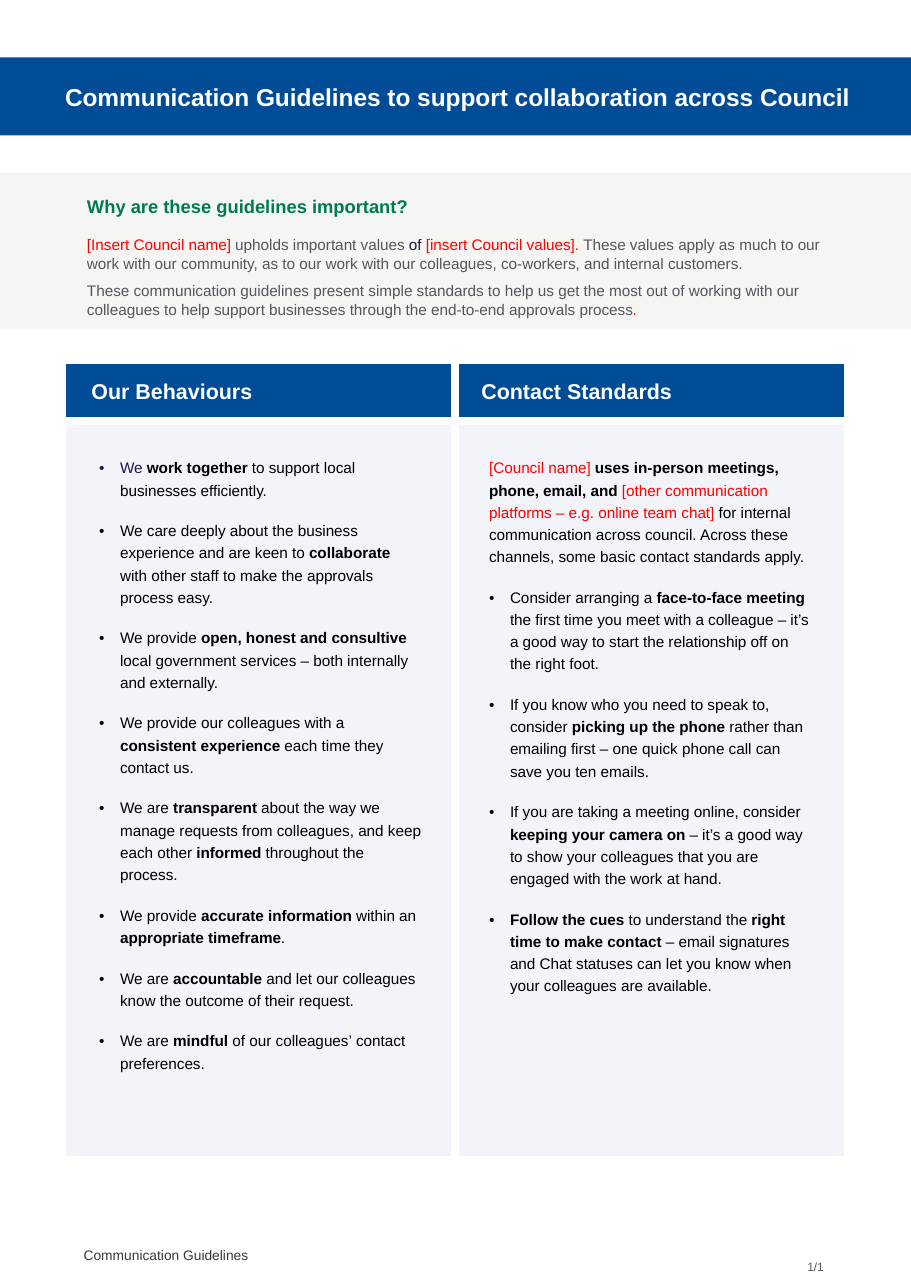
import dataclasses

import pptx
import pptx.dml.color
import pptx.enum.shapes
import pptx.enum.text
import pptx.oxml.ns
import pptx.util
from lxml import etree
from pptx.util import Inches

ALIGN = pptx.enum.text.PP_ALIGN
ANCHOR = pptx.enum.text.MSO_ANCHOR


@dataclasses.dataclass(frozen=True)
class Theme:
    """Colours and type sizes of the page."""
    font: str = "Arial"
    blue: str = "004C97"
    green: str = "007B4B"
    red: str = "FF0000"
    navy: str = "201547"
    black: str = "000000"
    white: str = "FFFFFF"
    grey: str = "53565A"
    footer: str = "383834"
    band: str = "D9D9D6"
    panel: str = "CBD5ED"
    title_size: float = 16
    column_size: float = 14
    heading_size: float = 12
    body_size: float = 10
    footer_size: float = 9
    number_size: float = 7.8


@dataclasses.dataclass(frozen=True)
class Span:
    """A stretch of text in one colour and weight."""
    text: str
    color: str
    bold: bool = False


THEME = Theme()

BEHAVIOURS = [
    "We provide *open, honest and consultive* local government services – both internally and externally.",
    "We provide our colleagues with a *consistent experience* each time they contact us.",
    "We are *transparent* about the way we manage requests from colleagues, "
    "and keep each other *informed* throughout the process.",
    "We provide *accurate information* within an *appropriate timeframe*.",
    "We are *accountable* and let our colleagues know the outcome of their request.",
]
STANDARDS = [
    "Consider arranging a *face-to-face meeting* the first time you meet with a colleague – "
    "it’s a good way to start the relationship off on the right foot.",
    "If you know who you need to speak to, consider *picking up the phone* rather than emailing first – "
    "one quick phone call can save you ten emails.",
    "If you are taking a meeting online, consider *keeping your camera on* – "
    "it’s a good way to show your colleagues that you are engaged with the work at hand.",
    "*Follow the cues* to understand the *right time to make contact* – "
    "email signatures and Chat statuses can let you know when your colleagues are available.",
]


def rgb(color):
    """Turn a hex string into a colour."""
    return pptx.dml.color.RGBColor.from_string(color)


def emphasised(text):
    """Split text into black spans, bold between asterisks."""
    return [Span(part, THEME.black, index % 2 == 1)
            for index, part in enumerate(text.split("*")) if part]


def add_node(parent, tag, **attributes):
    """Append a drawing element to its parent."""
    return etree.SubElement(parent, pptx.oxml.ns.qn(tag), attributes)


def paint(fill, color, holder=None, opacity=100):
    """Fill with a solid colour, see-through if asked."""
    fill.solid()
    fill.fore_color.rgb = rgb(color)
    if holder is not None:
        for node in holder.iter(pptx.oxml.ns.qn("a:srgbClr")):
            add_node(node, "a:alpha", val=str(opacity * 1000))


def set_frame(frame, insets, anchor=ANCHOR.TOP):
    """Set wrapping, anchor and the four insets of a text frame."""
    frame.word_wrap = True
    frame.auto_size = pptx.enum.text.MSO_AUTO_SIZE.NONE
    frame.vertical_anchor = anchor
    frame.margin_left, frame.margin_top, frame.margin_right, frame.margin_bottom = map(Inches, insets)


def write(frame, spans, size, first=False, bullet=False, align=ALIGN.LEFT, spacing=1.0, before=0, after=0):
    """Write one paragraph run by run."""
    para = frame.paragraphs[0] if first else frame.add_paragraph()
    para.alignment = align
    para.line_spacing = spacing
    para.space_before = pptx.util.Pt(0 if first else before)
    para.space_after = pptx.util.Pt(after)
    if bullet:
        properties = para._p.get_or_add_pPr()
        properties.set("marL", str(Inches(0.19)))
        properties.set("indent", str(-Inches(0.19)))
        add_node(properties, "a:buFont", typeface=THEME.font)
        add_node(properties, "a:buChar", char="•")
    for item in spans:
        span = para.add_run()
        span.text = item.text
        span.font.name = THEME.font
        span.font.size = pptx.util.Pt(size)
        span.font.bold = item.bold
        span.font.color.rgb = rgb(item.color)


def set_borders(cell, row, column):
    """Draw white borders, thick on the inner edges of a two by two table."""
    properties = cell._tc.get_or_add_tcPr()
    thick = {"a:lnL": column == 1, "a:lnR": column == 0, "a:lnT": row == 1, "a:lnB": row == 0}
    for index, (tag, inner) in enumerate(thick.items()):
        line = add_node(properties, tag, w=str(pptx.util.Pt(6 if inner else 1)))
        add_node(add_node(line, "a:solidFill"), "a:srgbClr", val=THEME.white)
        properties.insert(index, line)


def add_title(page):
    """Turn the title placeholder into the blue banner."""
    title = page.shapes.title
    title.left, title.top, title.width, title.height = map(Inches, (0, 0.52, 8.27, 0.71))
    paint(title.fill, THEME.blue)
    set_frame(title.text_frame, (0.59, 0.05, 0.1, 0.05), ANCHOR.MIDDLE)
    text = "Communication Guidelines to support collaboration across Council"
    write(title.text_frame, [Span(text, THEME.white, True)], THEME.title_size, first=True)


def add_intro(page):
    """Add the grey band that explains the guidelines."""
    band = page.shapes.add_shape(pptx.enum.shapes.MSO_SHAPE.RECTANGLE,
                                 *map(Inches, (0, 1.57, 8.27, 1.41)))
    band.shadow.inherit = False
    band.line.fill.background()
    paint(band.fill, THEME.band, band._element.spPr, 25)
    frame = band.text_frame
    set_frame(frame, (0.79, 0.2, 0.79, 0.2))
    write(frame, [Span("Why are these guidelines important?", THEME.green, True)], THEME.heading_size, first=True)
    write(frame, [
        Span("[Insert Council name] ", THEME.red),
        Span("upholds important values ", THEME.grey),
        Span("of ", THEME.navy),
        Span("[insert Council values]. ", THEME.red),
        Span("These values apply as much to our work with our community, as to our work "
             "with our colleagues, co-workers, and internal customers.", THEME.grey),
    ], THEME.body_size, before=12)
    write(frame, [
        Span("These communication guidelines present simple standards to help us get the most out of working "
             "with our colleagues to help support businesses through the end-to-end approvals process", THEME.grey),
        Span(".", THEME.red),
    ], THEME.body_size, before=6)


def add_columns(page, columns):
    """Add the table, one column for each heading and its (spans, bullet) paragraphs."""
    table = page.shapes.add_table(2, 2, *map(Inches, (0.59, 3.3, 7.08, 7.2))).table
    table.first_row = table.horz_banding = False
    table.rows[0].height, table.rows[1].height = Inches(0.52), Inches(6.68)
    for column, (heading, paragraphs) in enumerate(columns):
        table.columns[column].width = Inches(3.54)
        head, body = table.cell(0, column), table.cell(1, column)
        paint(head.fill, THEME.blue)
        paint(body.fill, THEME.panel, body._tc.tcPr, 24)
        for row, (cell, insets) in enumerate([(head, (0.24, 0.08)), (body, (0.31, 0.31))]):
            cell.margin_left = cell.margin_right = Inches(insets[0])
            cell.margin_top = cell.margin_bottom = Inches(insets[1])
            set_borders(cell, row, column)
        head.vertical_anchor = ANCHOR.MIDDLE
        write(head.text_frame, [Span(heading, THEME.white, True)], THEME.column_size, first=True)
        for index, (spans, bullet) in enumerate(paragraphs):
            write(body.text_frame, spans, THEME.body_size, first=index == 0, bullet=bullet,
                  spacing=1.3, before=6, after=6)


def add_label(page, text, place, size, color, right_inset=0, anchor=ANCHOR.TOP, **layout):
    """Add a one-line text box at the foot of the page."""
    box = page.shapes.add_textbox(*map(Inches, place))
    set_frame(box.text_frame, (0, 0, right_inset, 0), anchor)
    write(box.text_frame, [Span(text, color)], size, first=True, **layout)


def main():
    """Build the page and save it."""
    deck = pptx.Presentation()
    deck.slide_width, deck.slide_height = Inches(8.27), Inches(11.69)
    page = deck.slides.add_slide(deck.slide_layouts[5])
    together = [Span("We ", THEME.navy), *emphasised("*work together* to support local businesses efficiently.")]
    collaborate = emphasised("We care deeply about the business experience and are keen to *collaborate* "
                             "with other staff to make the approvals process easy.")
    mindful = [*emphasised("We are *mindful* of our colleagues"), Span("’", THEME.navy),
               Span(" contact preferences.", THEME.black)]
    behaviours = [together, collaborate, *map(emphasised, BEHAVIOURS), mindful]
    channels = [
        Span("[Council name] ", THEME.red),
        Span("uses in-person meetings, phone, email, and ", THEME.black, True),
        Span("[other communication platforms – e.g. online team chat] ", THEME.red),
        Span("for internal communication across council. Across these channels, "
             "some basic contact standards apply.", THEME.black),
    ]
    add_title(page)
    add_intro(page)
    add_columns(page, [
        ("Our Behaviours", [(spans, True) for spans in behaviours]),
        ("Contact Standards", [(channels, False), *((emphasised(text), True) for text in STANDARDS)]),
    ])
    add_label(page, "Communication Guidelines", (0.76, 11.3, 2.03, 0.29), THEME.footer_size, THEME.footer, spacing=1.1)
    add_label(page, "1/1", (5.82, 11.3, 1.86, 0.39), THEME.number_size, THEME.grey,
              right_inset=0.2, anchor=ANCHOR.MIDDLE, align=ALIGN.RIGHT)
    deck.save("out.pptx")


if __name__ == "__main__":
    main()
